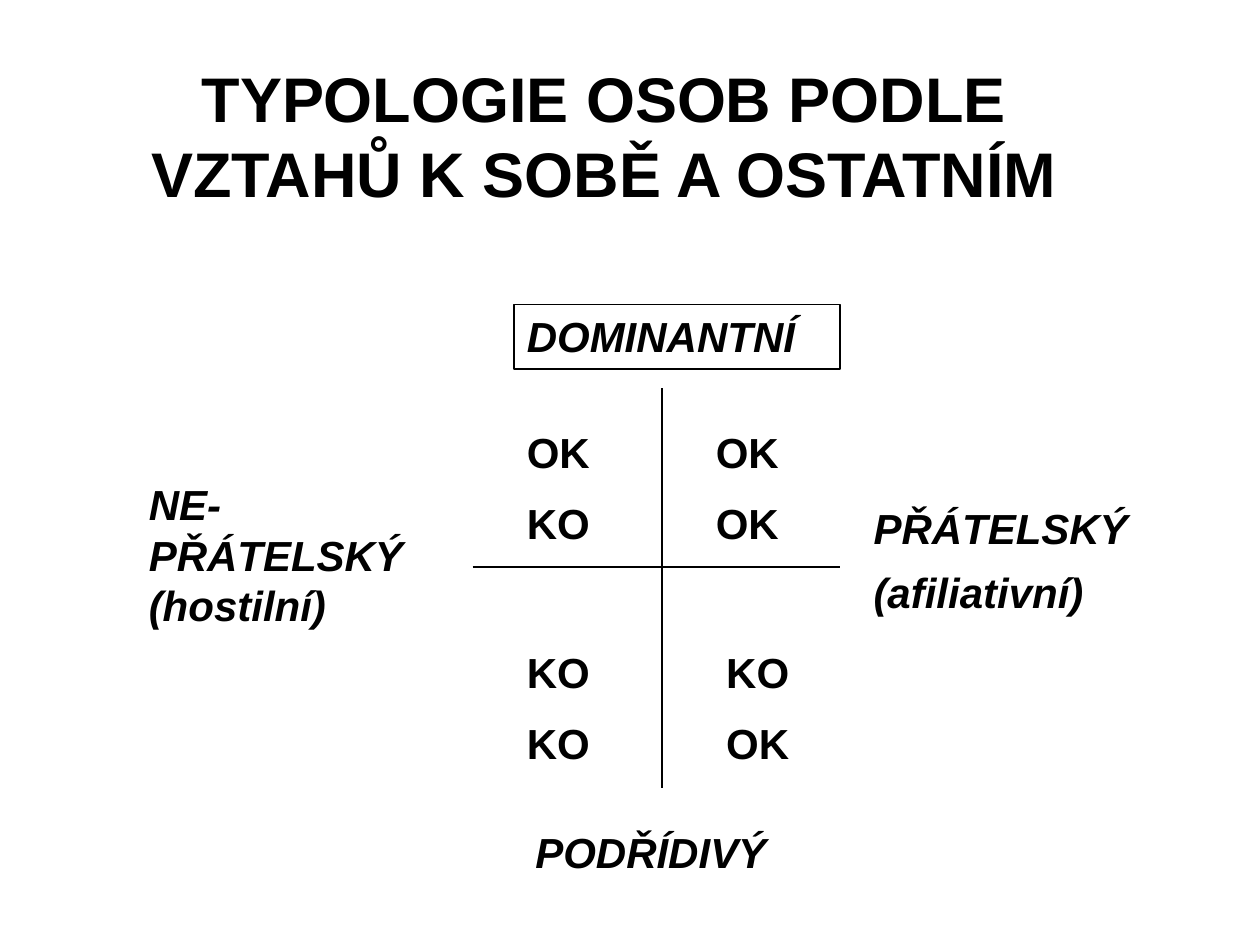
from typing import NamedTuple

from pptx import Presentation
from pptx.dml.color import RGBColor
from pptx.enum.shapes import MSO_CONNECTOR as Connector, MSO_SHAPE as Preset
from pptx.enum.text import MSO_ANCHOR as Anchor, MSO_AUTO_SIZE as AutoSize, PP_ALIGN as Align
from pptx.oxml.ns import qn
from pptx.slide import Slide
from pptx.util import Cm, Pt
from lxml.etree import SubElement

COLORS = {"ink": "000000", "paper": "FFFFFF"}
FONT = "Arial"


class Label(NamedTuple):
    left: float
    top: float
    width: float
    height: float
    lines: tuple[str, ...]
    size: int = 24
    italic: bool = True
    align: Align = Align.LEFT
    spacing: float = 1.0
    framed: bool = False


class Axis(NamedTuple):
    x1: float
    y1: float
    x2: float
    y2: float


def quadrant(left: float, top: float, *lines: str) -> Label:
    return Label(left, top, 2, 2.82, lines, italic=False)


LABELS = (
    Label(1.7, 1.07, 20.96, 3.3, ("TYPOLOGIE OSOB PODLE VZTAHŮ K SOBĚ A OSTATNÍM",),
          size=36, italic=False, align=Align.CENTER),
    Label(10.37, 6.14, 6.56, 1.3, ("DOMINANTNÍ",), framed=True),
    Label(2.75, 9.53, 5.93, 3.33, ("NE-PŘÁTELSKÝ (hostilní)",)),
    Label(8.89, 16.53, 8.46, 1.27, ("PODŘÍDIVÝ",), align=Align.CENTER),
    Label(17.36, 10.16, 5.72, 2.49, ("PŘÁTELSKÝ", "(afiliativní)"), spacing=0.85),
    quadrant(10.37, 8.47, "OK", "KO"),
    quadrant(14.18, 8.47, "OK", "OK"),
    quadrant(10.37, 12.91, "KO", "KO"),
    quadrant(14.39, 12.91, "KO", "OK"),
)
AXES = (Axis(13.34, 7.83, 13.34, 15.88), Axis(9.53, 11.43, 16.93, 11.43))


def color(name: str) -> RGBColor:
    return RGBColor.from_string(COLORS[name])


def draw_label(page: Slide, label: Label) -> None:
    place = [Cm(value) for value in label[:4]]
    if label.framed:
        box = page.shapes.add_shape(Preset.RECTANGLE, *place)
        box.shadow.inherit = False
        box.fill.background()
        box.line.color.rgb = color("ink")
        box.line.width = Pt(1)
    else:
        box = page.shapes.add_textbox(*place)
    frame = box.text_frame
    frame.word_wrap = True
    frame.auto_size = AutoSize.SHAPE_TO_FIT_TEXT
    frame.vertical_anchor = Anchor.TOP
    frame.text = "\n".join(label.lines)
    for para in frame.paragraphs:
        para.alignment = label.align
        para.line_spacing = label.spacing
        para.space_before = Pt(label.size / 2)
        para.font.name = FONT
        para.font.size = Pt(label.size)
        para.font.bold = True
        para.font.italic = label.italic
        para.font.color.rgb = color("ink")


def draw_axis(page: Slide, axis: Axis) -> None:
    line = page.shapes.add_connector(Connector.STRAIGHT, *(Cm(value) for value in axis))
    line.line.color.rgb = color("ink")
    line.line.width = Pt(1)
    SubElement(line._element.spPr, qn("a:effectLst"))


def main() -> None:
    """Build the slide on the typology of people and save it."""
    deck = Presentation()
    deck.slide_width, deck.slide_height = Cm(25.4), Cm(19.05)
    page = deck.slides.add_slide(deck.slide_layouts[6])
    page.background.fill.solid()
    page.background.fill.fore_color.rgb = color("paper")
    for axis in AXES:
        draw_axis(page, axis)
    for label in LABELS:
        draw_label(page, label)
    deck.save("out.pptx")


if __name__ == "__main__":
    main()
